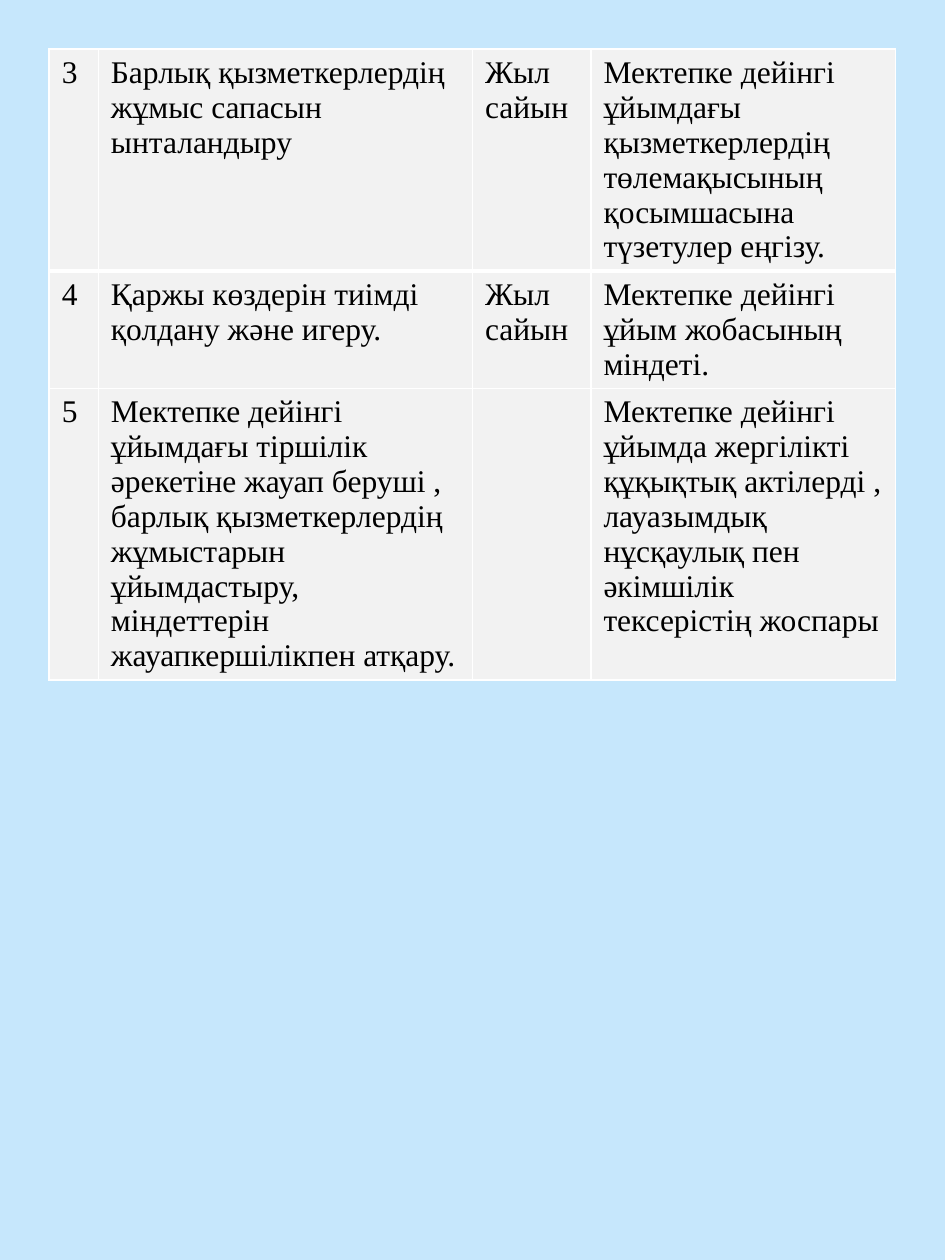
from pptx import Presentation
from pptx.dml.color import RGBColor as Rgb
from pptx.oxml.ns import qn
from pptx.util import Pt
from lxml.etree import SubElement

COLORS = {"sky": "C6E7FC", "cell": "F2F2F2", "border": "FFFFFF", "text": "000000"}
COLUMN_WIDTHS = [28.1, 213.8, 67.7, 174.2]
ROW_HEIGHTS = [126.5, 66.5, 166.5]
TASKS = [
    ["3", "Барлық қызметкерлердің жұмыс сапасын ынталандыру", "Жыл сайын",
     "Мектепке дейінгі ұйымдағы қызметкерлердің төлемақысының "
     "қосымшасына түзетулер еңгізу."],
    ["4", "Қаржы көздерін тиімді қолдану және игеру.", "Жыл сайын",
     "Мектепке дейінгі ұйым жобасының міндеті."],
    ["5", "Мектепке дейінгі ұйымдағы тіршілік әрекетіне жауап беруші , барлық "
     "қызметкерлердің жұмыстарын ұйымдастыру, міндеттерін жауапкершілікпен атқару.", "",
     "Мектепке дейінгі ұйымда жергілікті құқықтық актілерді , лауазымдық "
     "нұсқаулық пен әкімшілік тексерістің жоспары"],
]


class SlideBuilder:
    def __init__(self, slide, font="Times New Roman", size=18):
        self.slide, self.font, self.size = slide, font, size

    def background(self, color):
        fill = self.slide.background.fill
        fill.solid()
        fill.fore_color.rgb = Rgb.from_string(COLORS[color])

    def table(self, left, top, rows, widths, heights):
        frame = self.slide.shapes.add_table(
            len(rows), len(widths), Pt(left), Pt(top), Pt(sum(widths)), Pt(sum(heights)))
        table = frame.table
        table.first_row = table.horz_banding = False
        for column, width in zip(table.columns, widths):
            column.width = Pt(width)
        for index, (row, height) in enumerate(zip(table.rows, heights)):
            row.height = Pt(height)
            for cell, text in zip(row.cells, rows[index]):
                self.fill_cell(cell, text)
                self.cell_borders(cell, top=3 if index == 1 else 1,
                                  bottom=3 if index == 0 else 1)

    def fill_cell(self, cell, text):
        cell.fill.solid()
        cell.fill.fore_color.rgb = Rgb.from_string(COLORS["cell"])
        para = cell.text_frame.paragraphs[0]
        para.text = text
        for span in para.runs:
            span.font.name, span.font.size = self.font, Pt(self.size)
            span.font.color.rgb = Rgb.from_string(COLORS["text"])

    def cell_borders(self, cell, top, bottom):
        """Draw the four sides, placed before the fill as the schema requires."""
        properties = cell._tc.get_or_add_tcPr()
        sides = [("a:lnL", 1), ("a:lnR", 1), ("a:lnT", top), ("a:lnB", bottom)]
        for position, (tag, width) in enumerate(sides):
            line = SubElement(properties, qn(tag), w=str(Pt(width)))
            fill = SubElement(line, qn("a:solidFill"))
            SubElement(fill, qn("a:srgbClr"), val=COLORS["border"])
            properties.insert(position, line)


def main():
    deck = Presentation()
    deck.slide_width, deck.slide_height = Pt(540), Pt(720)
    page = SlideBuilder(deck.slides.add_slide(deck.slide_layouts[6]))
    page.background("sky")
    page.table(28.1, 28.1, TASKS, COLUMN_WIDTHS, ROW_HEIGHTS)
    deck.save("out.pptx")


if __name__ == "__main__":
    main()
